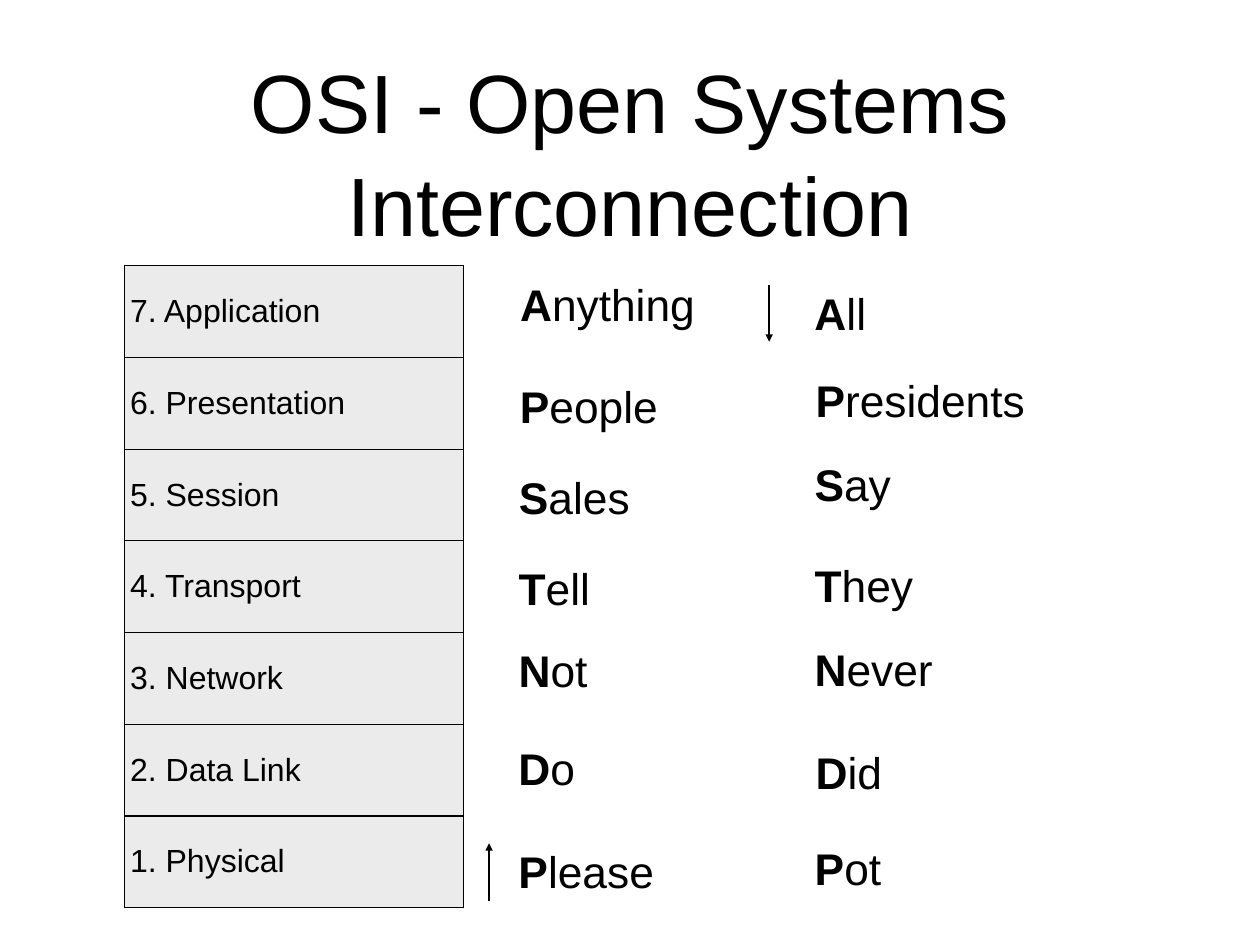
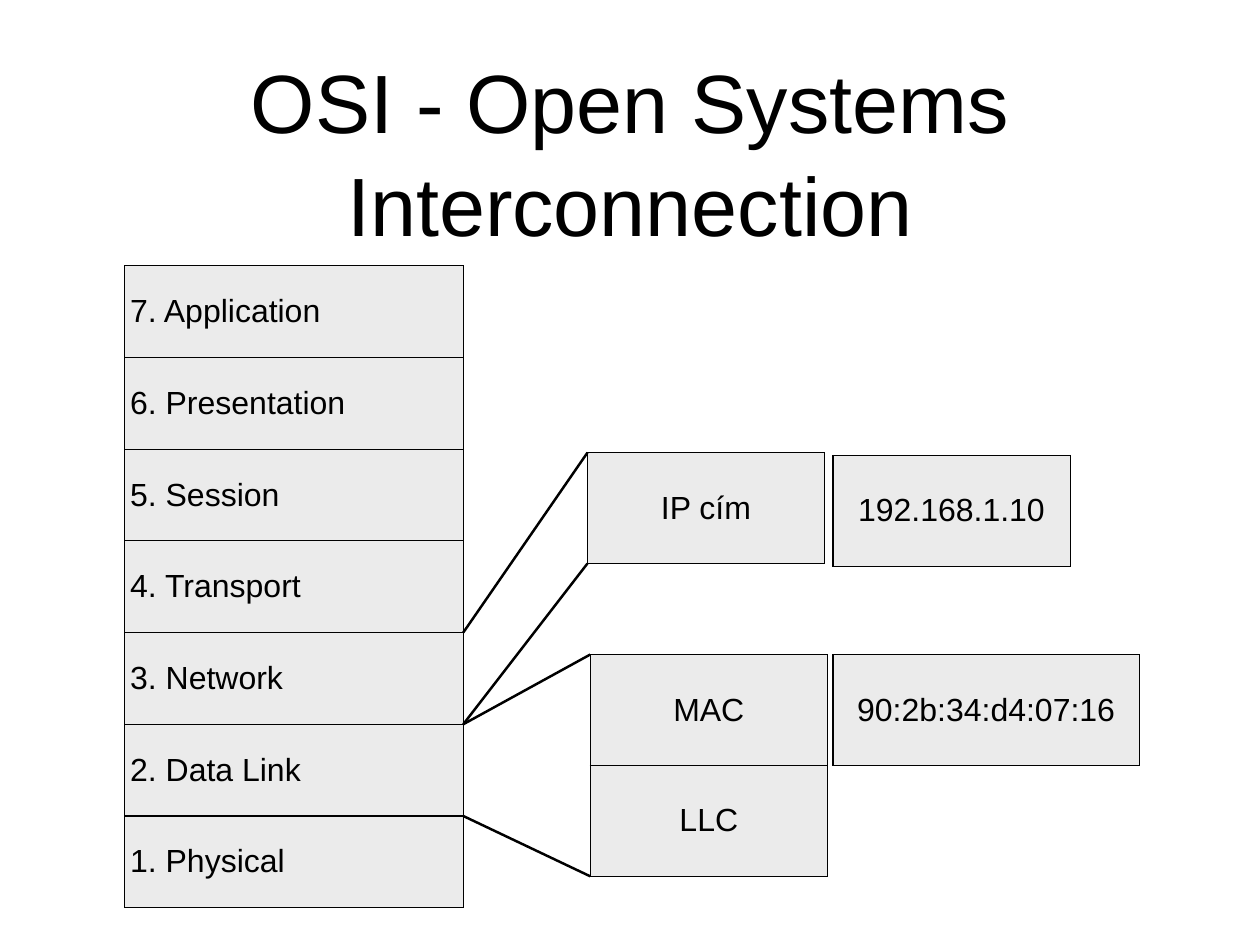
from lxml import etree
from pptx import Presentation
from pptx.dml.color import RGBColor
from pptx.enum.shapes import MSO_CONNECTOR
from pptx.enum.text import MSO_ANCHOR, MSO_AUTO_SIZE, PP_ALIGN
from pptx.oxml.ns import qn
from pptx.util import Cm, Pt

STRAIGHT = MSO_CONNECTOR.STRAIGHT
MIDDLE = MSO_ANCHOR.MIDDLE
GROW = MSO_AUTO_SIZE.SHAPE_TO_FIT_TEXT
LEFT, CENTER = PP_ALIGN.LEFT, PP_ALIGN.CENTER

BLACK = RGBColor(0x00, 0x00, 0x00)
PALE_GREY = RGBColor(0xEB, 0xEB, 0xEB)
FONT = "Arial"
INSET = 0.15

TITLE = "OSI - Open Systems Interconnection"
LAYERS = ["7. Application", "6. Presentation", "5. Session", "4. Transport",
          "3. Network", "2. Data Link", "1. Physical"]
STACK_LEFT, STACK_TOP, STACK_WIDTH, LAYER_HEIGHT = 3.58, 7.62, 9.7, 2.63
CELL_WIDTH, CELL_HEIGHT = 6.8, 3.18

UPWARD_WORDS = [("Anything", 0, 5.41), ("People", 2.92, 4.34), ("Sales", 5.52, 3.51),
                ("Tell", 8.13, 2.36), ("Not", 10.49, 2.29), ("Do", 13.31, 1.93),
                ("Please", 16.26, 4.19)]
DOWNWARD_WORDS = [("All", 0, 1.8), ("Presidents", 2.49, 6.38), ("Say", 4.9, 2.51),
                  ("They", 7.8, 3.15), ("Never", 10.21, 3.71), ("Did", 13.15, 2.29),
                  ("Pot", 15.92, 2.24)]


def add_span(para, text, size, bold=False):
    """Add one run in the deck's font."""
    span = para.add_run()
    span.text = text
    span.font.name = FONT
    span.font.size = Pt(size)
    span.font.bold = bold
    span.font.color.rgb = BLACK


def add_box(slide, left, top, width, height, wrap):
    """Add a centred text box and return its frame."""
    frame = slide.shapes.add_textbox(Cm(left), Cm(top), Cm(width), Cm(height)).text_frame
    frame.margin_left = frame.margin_right = Cm(INSET)
    frame.margin_top = frame.margin_bottom = Cm(INSET)
    frame.vertical_anchor = MIDDLE
    frame.word_wrap = wrap
    frame.paragraphs[0].alignment = CENTER
    return frame


def add_line(slide, start, end, arrow=False):
    """Draw a straight black line, with an arrowhead at its end on request."""
    line = slide.shapes.add_connector(STRAIGHT, *(Cm(value) for value in (*start, *end)))
    line.line.color.rgb = BLACK
    line.line.width = Pt(2)
    if arrow:
        outline = line.line._get_or_add_ln()
        etree.SubElement(outline, qn("a:tailEnd"), type="triangle")
    etree.SubElement(line._element.spPr, qn("a:effectLst"))


def add_borders(cell):
    """Give a table cell a thin black border on all sides."""
    properties = cell._tc.get_or_add_tcPr()
    for side in ("a:lnL", "a:lnR", "a:lnT", "a:lnB"):
        edge = etree.SubElement(properties, qn(side), w=str(Pt(1)))
        fill = etree.SubElement(edge, qn("a:solidFill"))
        etree.SubElement(fill, qn("a:srgbClr"), val=str(BLACK))


def add_stack(slide, left, top, width, row_height, labels, align=CENTER):
    """Draw a one-column table of grey cells."""
    table = slide.shapes.add_table(len(labels), 1, Cm(left), Cm(top), Cm(width),
                                   Cm(row_height * len(labels))).table
    table.first_row = table.horz_banding = False
    for index, label in enumerate(labels):
        table.rows[index].height = Cm(row_height)
        cell = table.cell(index, 0)
        cell.margin_left = cell.margin_right = Cm(INSET)
        cell.margin_top = cell.margin_bottom = Cm(INSET)
        cell.vertical_anchor = MIDDLE
        add_borders(cell)
        cell.fill.solid()
        cell.fill.fore_color.rgb = PALE_GREY
        para = cell.text_frame.paragraphs[0]
        para.alignment = align
        add_span(para, label, 26)


def add_mnemonic(slide, left, top, words):
    """Write a column of words with bold initials."""
    for word, drop, width in words:
        frame = add_box(slide, left, top + drop, width, 1.8, False)
        frame.auto_size = GROW
        para = frame.paragraphs[0]
        add_span(para, word[0], 36, True)
        add_span(para, word[1:], 36)


def add_detail(slide, layer, left, top, labels):
    """Draw a detail stack and the lines that spread to it from a layer."""
    add_stack(slide, left, top, CELL_WIDTH, CELL_HEIGHT, labels)
    for edge in (0, 1):
        start = STACK_LEFT + STACK_WIDTH, STACK_TOP + (layer + edge) * LAYER_HEIGHT
        end = left, top + edge * CELL_HEIGHT * len(labels)
        add_line(slide, start, end)


def add_osi_slide(deck):
    """Add a slide with the title and the seven layers."""
    slide = deck.slides.add_slide(deck.slide_layouts[6])
    para = add_box(slide, 2.64, 1.3, 30.84, 6, True).paragraphs[0]
    para.line_spacing = 1.04
    add_span(para, TITLE, 67.2)
    add_stack(slide, STACK_LEFT, STACK_TOP, STACK_WIDTH, LAYER_HEIGHT, LAYERS, LEFT)
    return slide


def build_mnemonic_slide(deck):
    """Build the slide with the two memory sentences."""
    slide = add_osi_slide(deck)
    add_mnemonic(slide, 14.71, 7.82, UPWARD_WORDS)
    add_mnemonic(slide, 23.19, 8.08, DOWNWARD_WORDS)
    add_line(slide, (14.02, 25.83), (14.02, 24.18), True)
    add_line(slide, (22.05, 8.18), (22.05, 9.8), True)


def build_address_slide(deck):
    """Build the slide with the addresses of two layers."""
    slide = add_osi_slide(deck)
    add_detail(slide, LAYERS.index("2. Data Link"), 16.92, 18.77, ["MAC", "LLC"])
    add_detail(slide, LAYERS.index("3. Network"), 16.84, 12.98, ["IP cím"])
    add_stack(slide, 23.88, 18.77, 8.79, CELL_HEIGHT, ["90:2b:34:d4:07:16"])
    add_stack(slide, 23.88, 13.06, CELL_WIDTH, CELL_HEIGHT, ["192.168.1.10"])


def main():
    """Build and save the deck."""
    deck = Presentation()
    deck.slide_width, deck.slide_height = Cm(36.12), Cm(27.1)
    build_mnemonic_slide(deck)
    build_address_slide(deck)
    deck.save("out.pptx")


if __name__ == "__main__":
    main()
